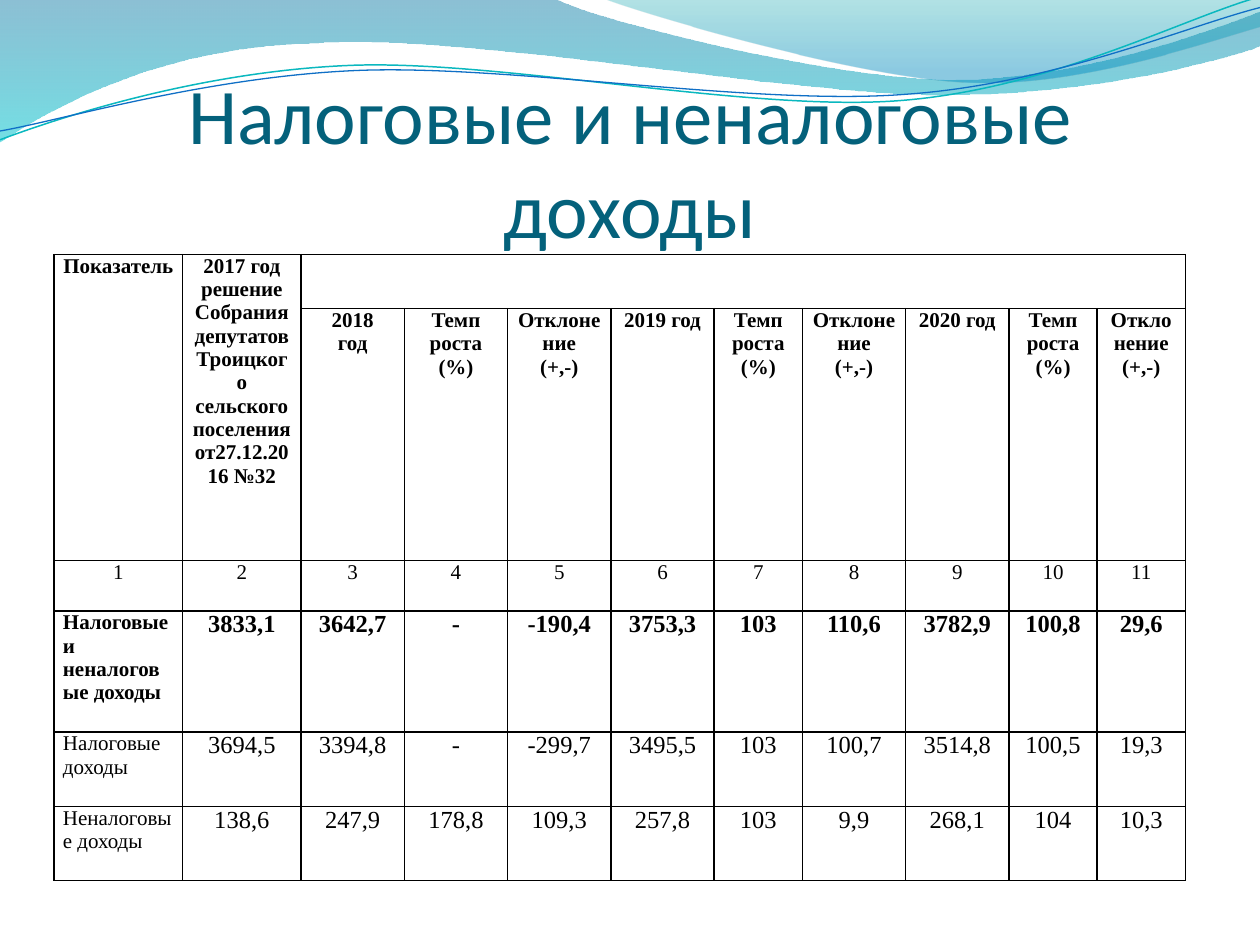
import pptx
import pptx.dml.color
import pptx.enum.text
import pptx.oxml
import pptx.oxml.ns
import pptx.util
from pptx.util import Inches

ALIGN = pptx.enum.text.PP_ALIGN
COLORS = {"title": "04617B", "text": "000000", "border": "000000"}
TITLE = "Налоговые и неналоговые доходы"

GROWTH, DEVIATION = "Темп роста (%)", "Отклонение\n(+,-)"
TOP_HEADER = [
    "Показатель",
    "2017 год\nрешение Собрания депутатов Троицкого сельского поселения от27.12.2016 №32",
] + [""] * 9
YEAR_HEADER = ["", ""]
for year in ("2018\nгод", "2019 год", "2020 год"):
    YEAR_HEADER += [year, GROWTH, DEVIATION]

# cells, least row height, bold, size of the first column, size of the others
ROWS = [
    (TOP_HEADER, 0.43, True, 12, 12),
    (YEAR_HEADER, 0.83, True, 12, 12),
    ([str(n) for n in range(1, 12)], 0.4, False, 12, 12),
    (["Налоговые и неналоговые доходы", "3833,1", "3642,7", "-", "-190,4", "3753,3",
      "103", "110,6", "3782,9", "100,8", "29,6"], 0.96, True, 12, 14),
    (["Налоговые доходы", "3694,5", "3394,8", "-", "-299,7", "3495,5",
      "103", "100,7", "3514,8", "100,5", "19,3"], 0.59, False, 12, 14),
    (["Неналоговые доходы", "138,6", "247,9", "178,8", "109,3", "257,8",
      "103", "9,9", "268,1", "104", "10,3"], 0.59, False, 12, 14),
]
FIRST_DATA_ROW = 3
COLUMN_WIDTHS = [1.02, 0.94, 0.82, 0.82, 0.82, 0.82, 0.7, 0.82, 0.82, 0.7, 0.7]
MERGES = [((0, 0), (1, 0)), ((0, 1), (1, 1)), ((0, 2), (0, 10))]

# Outlines: a pair is a straight step, six numbers are a Bezier curve.
# Gradient stops: position, colour, opacity in percent.
WAVES = [
    ([(0, 0), (4.4, -0.01), (4.76, 0.17, 6.64, 0.63, 7.58, 0.63),
      (8.53, 0.63, 9.58, 0.26, 10, 0.09), (10.01, 0.36),
      (9.83, 0.44, 8.7, 0.76, 7.46, 0.75), (6.22, 0.75, 3.82, 0.28, 2.57, 0.34),
      (1.29, 0.36, 0.46, 0.83, -0.01, 1.13)],
     [(0, "0074A1", 45), (1, "00C6CF", 55)]),
    ([(4.79, -0.01), (5.09, 0.11, 6.82, 0.62, 7.69, 0.65),
      (8.56, 0.69, 9.61, 0.32, 10, 0.21), (10, 0)],
     [(0, "00A1A9", 30), (0.8, "008BBF", 45)]),
]
RIPPLES = [
    ([(0, 1.11), (0.48, 0.93, 1.58, 0.57, 2.77, 0.52),
      (3.95, 0.47, 5.93, 0.89, 7.13, 0.8), (8.33, 0.71, 9.38, 0.15, 9.98, -0.02)],
     "0AB8BF", 0.85),
    ([(0, 1.04), (0.47, 0.96, 1.64, 0.61, 2.83, 0.56),
      (4.03, 0.51, 5.97, 0.84, 7.17, 0.75), (8.36, 0.67, 9.41, 0.21, 10, 0.06)],
     "0F6FC6", 0.75),
]


def rgb(value):
    return pptx.dml.color.RGBColor.from_string(value)


def draw_outline(slide, outline, closed):
    """Build straight steps through all points, then bend triples into curves."""
    points = [(Inches(step[i]), Inches(step[i + 1]))
              for step in outline for i in range(0, len(step), 2)]
    builder = slide.shapes.build_freeform(*points[0])
    builder.add_line_segments(points[1:], close=closed)
    shape = builder.convert_to_shape()
    shape.shadow.inherit = False
    segments = iter(list(shape.element.iter(pptx.oxml.ns.qn("a:lnTo"))))
    for step in outline[1:]:
        parts = [next(segments) for _ in range(len(step) // 2)]
        if len(parts) == 3:
            curve = parts[0].makeelement(pptx.oxml.ns.qn("a:cubicBezTo"), {})
            parts[0].addprevious(curve)
            for part in parts:
                curve.append(part[0])
                part.getparent().remove(part)
    return shape


def add_wave(slide, outline, stops):
    wave = draw_outline(slide, outline, True)
    wave.line.fill.background()
    wave.fill.gradient()
    wave.fill.gradient_angle = 270
    for stop, (position, color, _) in zip(wave.fill.gradient_stops, stops):
        stop.position = position
        stop.color.rgb = rgb(color)
    for node, (_, _, opacity) in zip(wave.element.iter(pptx.oxml.ns.qn("a:srgbClr")), stops):
        alpha = node.makeelement(pptx.oxml.ns.qn("a:alpha"), {"val": str(opacity * 1000)})
        node.append(alpha)


def add_ripple(slide, outline, color, width):
    ripple = draw_outline(slide, outline, False)
    ripple.fill.background()
    ripple.line.color.rgb = rgb(color)
    ripple.line.width = pptx.util.Pt(width)


def style_paragraph(paragraph, font, size, color, bold=False, align=ALIGN.CENTER):
    paragraph.alignment = align
    paragraph.font.name = font
    paragraph.font.size = pptx.util.Pt(size)
    paragraph.font.bold = bold
    paragraph.font.color.rgb = rgb(color)


def add_title(slide):
    title = slide.shapes.add_textbox(Inches(0.5), Inches(0.77), Inches(9), Inches(1.25))
    frame = title.text_frame
    frame.word_wrap = True
    frame.vertical_anchor = pptx.enum.text.MSO_ANCHOR.BOTTOM
    frame.margin_left = frame.margin_right = frame.margin_bottom = 0
    frame.margin_top = Inches(0.05)
    frame.text = TITLE
    style_paragraph(frame.paragraphs[0], "Calibri", 45, COLORS["title"])


def set_borders(cell):
    properties = cell._tc.get_or_add_tcPr()
    for side in "LRTB":
        properties.append(pptx.oxml.parse_xml(
            f'<a:ln{side} {pptx.oxml.ns.nsdecls("a")} w="12700"><a:solidFill>'
            f'<a:srgbClr val="{COLORS["border"]}"/></a:solidFill></a:ln{side}>'))


def add_income_table(slide):
    heights = [row[1] for row in ROWS]
    table = slide.shapes.add_table(
        len(ROWS), len(COLUMN_WIDTHS), Inches(0.43), Inches(2.02),
        Inches(sum(COLUMN_WIDTHS)), Inches(sum(heights))).table
    table.first_row = table.horz_banding = False
    for column, width in zip(table.columns, COLUMN_WIDTHS):
        column.width = Inches(width)
    for r, (texts, height, bold, label_size, value_size) in enumerate(ROWS):
        table.rows[r].height = Inches(height)
        for c, text in enumerate(texts):
            cell = table.cell(r, c)
            cell.margin_left = cell.margin_right = Inches(0.07)
            cell.margin_top = cell.margin_bottom = 0
            set_borders(cell)
            cell.fill.background()
            cell.text = text
            is_label = c == 0 and r >= FIRST_DATA_ROW
            for paragraph in cell.text_frame.paragraphs:
                style_paragraph(paragraph, "Times New Roman",
                                value_size if c else label_size, COLORS["text"], bold,
                                ALIGN.JUSTIFY if is_label else ALIGN.CENTER)
    for first, last in MERGES:
        table.cell(*first).merge(table.cell(*last))


def main():
    deck = pptx.Presentation()
    deck.slide_width, deck.slide_height = Inches(10), Inches(7.5)
    slide = deck.slides.add_slide(deck.slide_layouts[6])
    for wave in WAVES:
        add_wave(slide, *wave)
    for ripple in RIPPLES:
        add_ripple(slide, *ripple)
    add_title(slide)
    add_income_table(slide)
    deck.save("out.pptx")


if __name__ == "__main__":
    main()
